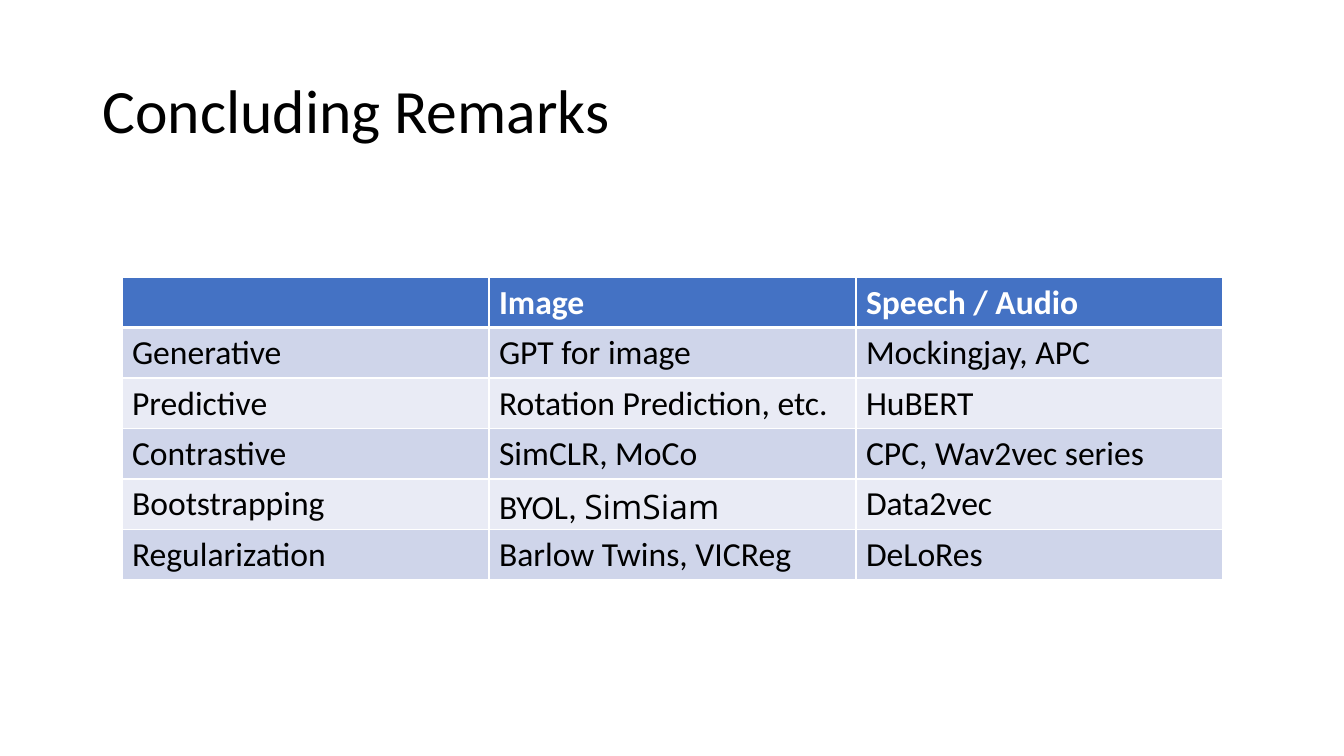
from lxml import etree
from pptx import Presentation
from pptx.dml.color import RGBColor
from pptx.enum import text
from pptx.oxml import ns
from pptx.util import Inches, Pt

BLACK = RGBColor(0x00, 0x00, 0x00)
WHITE = RGBColor(0xFF, 0xFF, 0xFF)
HEADER_BLUE = RGBColor(0x44, 0x72, 0xC4)
BAND_COLORS = (RGBColor(0xE9, 0xEB, 0xF5), RGBColor(0xCF, 0xD5, 0xEA))

BODY_FONT = "Calibri"
ACCENT_FONT = "Open Sans"

# Each cell is a list of (text, font) runs.
METHODS = [
    [[], [("Image", BODY_FONT)], [("Speech / Audio", BODY_FONT)]],
    [[("Generative", BODY_FONT)], [("GPT for image", BODY_FONT)],
     [("Mockingjay, APC", BODY_FONT)]],
    [[("Predictive", BODY_FONT)], [("Rotation Prediction, etc.", BODY_FONT)],
     [("HuBERT", BODY_FONT)]],
    [[("Contrastive", BODY_FONT)], [("SimCLR, MoCo", BODY_FONT)],
     [("CPC, Wav2vec series", BODY_FONT)]],
    [[("Bootstrapping", BODY_FONT)],
     [("BYOL, ", BODY_FONT), ("SimSiam", ACCENT_FONT)],
     [("Data2vec", BODY_FONT)]],
    [[("Regularization", BODY_FONT)], [("Barlow Twins, VICReg", BODY_FONT)],
     [("DeLoRes", BODY_FONT)]],
]


def add_run(paragraph, words, font_name, size, color, bold=False):
    run = paragraph.add_run()
    run.text = words
    run.font.name = font_name
    run.font.size = Pt(size)
    run.font.bold = bold
    run.font.color.rgb = color


def add_title(slide, words):
    box = slide.shapes.add_textbox(Inches(0.92), Inches(0.4), Inches(11.5), Inches(1.45))
    frame = box.text_frame
    frame.word_wrap = True
    frame.vertical_anchor = text.MSO_ANCHOR.MIDDLE
    paragraph = frame.paragraphs[0]
    paragraph.line_spacing = 0.9
    add_run(paragraph, words, BODY_FONT, 44, BLACK)


def set_borders(cell, top, bottom):
    """Draw white cell borders; top and bottom are widths in points."""
    properties = cell._tc.get_or_add_tcPr()
    for side, width in (("L", 1), ("R", 1), ("T", top), ("B", bottom)):
        line = etree.SubElement(properties, ns.qn(f"a:ln{side}"), w=str(Pt(width)))
        fill = etree.SubElement(line, ns.qn("a:solidFill"))
        etree.SubElement(fill, ns.qn("a:srgbClr"), val=str(WHITE))


def fill_cell(cell, runs, row):
    is_header = row == 0
    set_borders(cell, top=3 if row == 1 else 1, bottom=3 if is_header else 1)
    cell.fill.solid()
    cell.fill.fore_color.rgb = HEADER_BLUE if is_header else BAND_COLORS[row % 2]
    for words, font_name in runs:
        add_run(cell.text_frame.paragraphs[0], words, font_name, 24,
                WHITE if is_header else BLACK, bold=is_header)


def add_methods_table(slide, rows):
    row_height = Inches(0.5)
    frame = slide.shapes.add_table(len(rows), len(rows[0]), Inches(1.21), Inches(2.75),
                                   Inches(10.92), row_height * len(rows))
    for row, cells in enumerate(rows):
        for column, runs in enumerate(cells):
            fill_cell(frame.table.cell(row, column), runs, row)


def main():
    presentation = Presentation()
    presentation.slide_width = Inches(13.33)
    presentation.slide_height = Inches(7.5)
    slide = presentation.slides.add_slide(presentation.slide_layouts[6])
    add_title(slide, "Concluding Remarks")
    add_methods_table(slide, METHODS)
    presentation.save("out.pptx")


if __name__ == "__main__":
    main()
